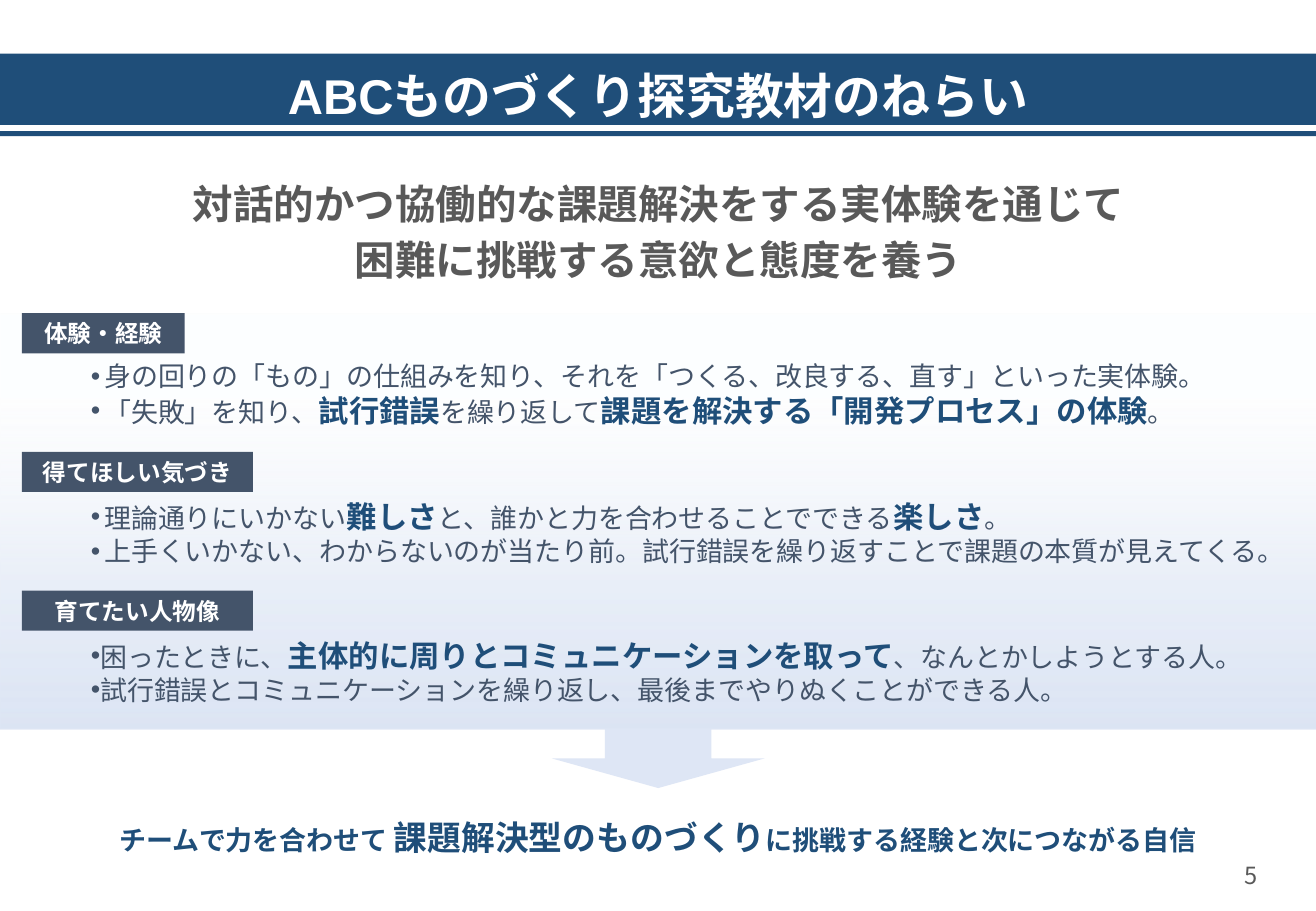
from dataclasses import dataclass
from lxml import etree
from pptx import Presentation
from pptx import util as u
from pptx.dml import color
from pptx.enum import shapes, text
from pptx.oxml import ns

Cm = u.Cm


@dataclass(frozen=True)
class Theme:
    """Colours, fonts and type sizes of the slide."""
    navy: str = "1F4E79"
    slate: str = "44546A"
    grey: str = "595959"
    white: str = "FFFFFF"
    arrow: str = "DEE6F5"
    latin: str = "Arial"
    asian: str = "Noto Sans CJK JP"
    title: float = 28.9
    headline: float = 24
    closing: float = 20
    strong: float = 18
    body: float = 16
    label: float = 14


T = Theme()
FADE = ((0, "EAF0F9", 7), (20, "EAF0F9", 7), (60, "D5E0F2", 46), (100, "A9BEE4", 40))
SECTIONS = (
    ("体験・経験", 3.4, 0.28, (
        "身の回りの「もの」の仕組みを知り、それを「つくる、改良する、直す」といった実体験。",
        "「失敗」を知り、|試行錯誤|を繰り返して|課題を解決する「開発プロセス」の体験|。")),
    ("得てほしい気づき", 4.83, 0.28, (
        "理論通りにいかない|難しさ|と、誰かと力を合わせることでできる|楽しさ|。",
        "上手くいかない、わからないのが当たり前。試行錯誤を繰り返すことで課題の本質が見えてくる。")),
    ("育てたい人物像", 4.83, 0.17, (
        "困ったときに、|主体的に周りとコミュニケーションを取って|、なんとかしようとする人。",
        "試行錯誤とコミュニケーションを繰り返し、最後までやりぬくことができる人。")),
)


def assign(obj, values):
    """Set each named attribute of an object."""
    for name, value in values.items():
        setattr(obj, name, value)


def style(size, rgb, bold=True, font=T.latin):
    """Describe the look of a run."""
    return {"size": u.Pt(size), "bold": bold, "name": font}, rgb


def add_run(p, words, look):
    """Add one styled run to a paragraph."""
    r = p.add_run()
    r.text = words
    values, rgb = look
    assign(r.font, values)
    r.font.color.rgb = color.RGBColor.from_string(rgb)
    ea = etree.SubElement(r._r.get_or_add_rPr(), ns.qn("a:ea"))
    ea.set("typeface", T.asian)


def write(sp, lines, base, strong=None, align=text.PP_ALIGN.CENTER,
          anchor=text.MSO_ANCHOR.TOP, inset=0.25, side=0.25, spacing=1.0, indent=0, wrap=True):
    """Fill a shape with lines, where | switches between base and strong."""
    tf = sp.text_frame
    assign(tf, {"word_wrap": wrap, "auto_size": text.MSO_AUTO_SIZE.NONE,
                "vertical_anchor": anchor, "margin_left": Cm(side), "margin_right": Cm(side),
                "margin_top": Cm(inset), "margin_bottom": Cm(inset)})
    for i, line in enumerate(lines):
        p = tf.paragraphs[0] if i == 0 else tf.add_paragraph()
        pPr = p._p.get_or_add_pPr()
        pPr.set("marL", str(Cm(indent)))
        pPr.set("indent", str(-Cm(indent)))
        if indent:
            etree.SubElement(pPr, ns.qn("a:buFont")).set("typeface", T.latin)
            etree.SubElement(pPr, ns.qn("a:buChar")).set("char", "•")
        else:
            etree.SubElement(pPr, ns.qn("a:buNone"))
        assign(p, {"alignment": align, "line_spacing": spacing,
                   "space_before": u.Pt(0), "space_after": u.Pt(0)})
        for n, words in enumerate(line.split("|")):
            add_run(p, words, strong if n % 2 else base)


def place(sp, box):
    """Move a placeholder to a box and bring it to the front."""
    assign(sp, dict(zip(("left", "top", "width", "height"), map(Cm, box))))
    sp.element.getparent().append(sp.element)
    return sp


def add_block(s, box, rgb, kind=shapes.MSO_SHAPE.RECTANGLE):
    """Add a plain filled shape without outline or shadow."""
    sp = s.shapes.add_shape(kind, *map(Cm, box))
    sp.shadow.inherit = False
    sp.line.fill.background()
    sp.fill.solid()
    sp.fill.fore_color.rgb = color.RGBColor.from_string(rgb)
    return sp


def add_banner(s, box):
    """Place the title on its navy banner with a white stripe."""
    x, y, w, h = box
    add_block(s, box, T.navy)
    add_block(s, (x, y + 1.5, w, 0.12), T.white)
    sp = place(s.shapes.title, (x + 2.84, y + 0.12, w - 5.68, 1.5))
    write(sp, ["ABCものづくり探究教材のねらい"], style(T.title, T.white),
          anchor=text.MSO_ANCHOR.MIDDLE, inset=0.13)


def add_headline(s, box):
    """Place the two-line aim under the banner."""
    write(place(s.placeholders[1], box),
          ["対話的かつ協働的な課題解決をする実体験を通じて", "困難に挑戦する意欲と態度を養う"],
          style(T.headline, T.grey), spacing=1.15)


def add_fade(s, box):
    """Add the band that fades in from top to bottom."""
    sp = add_block(s, box, T.white)
    sp.fill.gradient()
    sp.fill.gradient_angle = 270
    stops = sp.element.spPr.find(".//" + ns.qn("a:gsLst"))
    for stop in list(stops):
        stops.remove(stop)
    for pos, rgb, alpha in FADE:
        gs = etree.SubElement(stops, ns.qn("a:gs"), pos=str(pos * 1000))
        clr = etree.SubElement(gs, ns.qn("a:srgbClr"), val=rgb)
        etree.SubElement(clr, ns.qn("a:alpha"), val=str(alpha * 1000))


def add_section(s, box, sp, label, label_width, indent, lines):
    """Place a label and its bullet list."""
    x, y, w, h = box
    tag = add_block(s, (x + 0.46, y, label_width, 0.84), T.slate)
    write(tag, [label], style(T.label, T.white), anchor=text.MSO_ANCHOR.MIDDLE, inset=0)
    write(place(sp, (x + 1.65, y + 0.84, w - 1.65, h - 0.84)), lines,
          style(T.body, T.slate, False), style(T.strong, T.navy),
          align=text.PP_ALIGN.LEFT, inset=0.13, indent=indent)


def add_sections(s, box):
    """Stack the sections at an equal pitch on the fading band."""
    x, y, w, h = box
    add_fade(s, box)
    pitch = h / len(SECTIONS)
    for i, section in enumerate(SECTIONS):
        add_section(s, (x, y + i * pitch, w, 2.54), s.placeholders[2 + i], *section)


def add_conclusion(s, box):
    """Add the arrow, the closing sentence and the page number."""
    x, y, w, h = box
    add_block(s, (x + w / 2 - 2.22, y, 4.45, 1.24), T.arrow, shapes.MSO_SHAPE.DOWN_ARROW)
    sp = s.shapes.add_textbox(*map(Cm, (x + 0.84, y + 1.6, w - 1.68, 1.96)))
    write(sp, ["チームで力を合わせて |課題解決型のものづくり|に挑戦する経験と次につながる自信"],
          style(T.body, T.navy), style(T.closing, T.navy))
    sp = s.shapes.add_textbox(*map(Cm, (x + w - 1.88, y + 2.67, 1.04, 0.81)))
    write(sp, ["5"], style(T.label, T.grey, False, T.asian), inset=0.1, side=0.1, wrap=False)


def main():
    """Build the slide and save it."""
    prs = Presentation()
    assign(prs, {"slide_width": Cm(27.51), "slide_height": Cm(19.05)})
    s = prs.slides.add_slide(prs.slide_layouts[4])
    add_banner(s, (0, 1.12, 27.51, 1.73))
    add_headline(s, (1.07, 3.35, 25.4, 2.87))
    add_sections(s, (0, 6.55, 27.51, 8.7))
    add_conclusion(s, (0, 15.24, 27.51, 3.81))
    prs.save("out.pptx")


if __name__ == "__main__":
    main()
